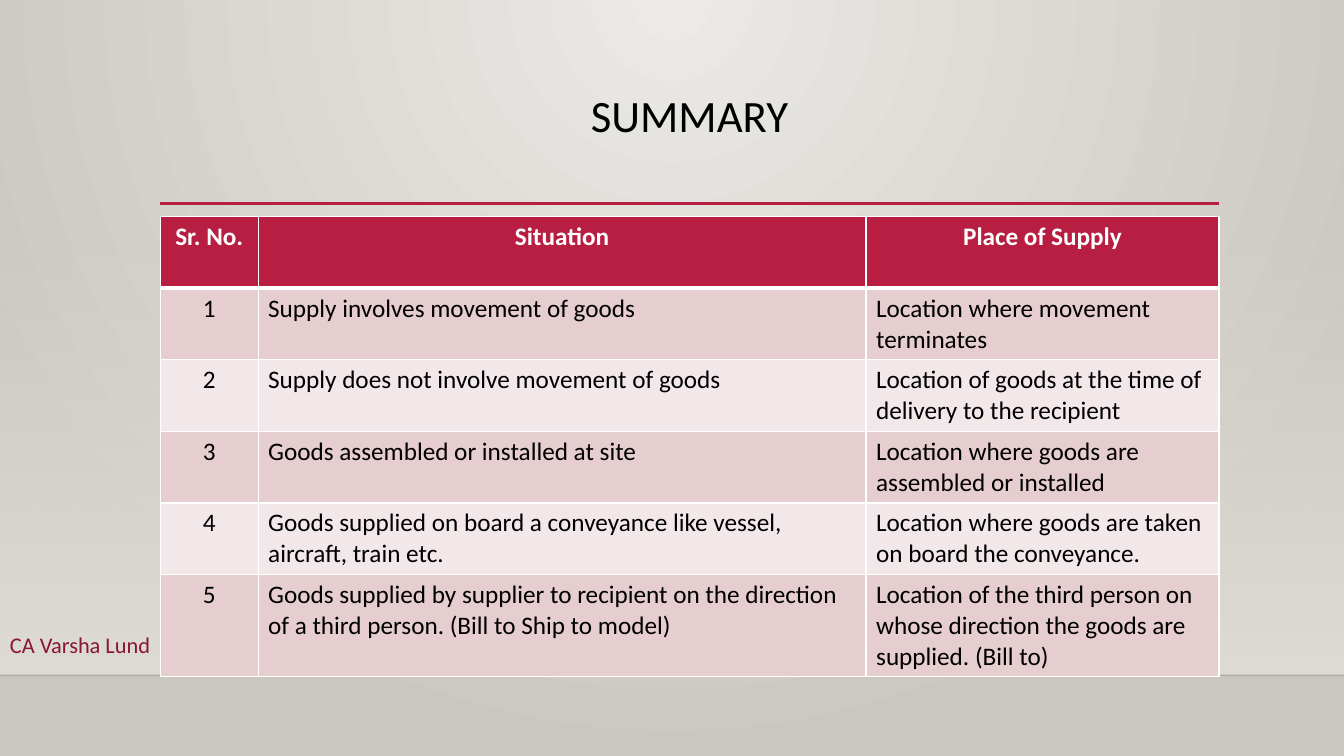
from lxml import etree
from pptx import Presentation
from pptx.dml.color import RGBColor
from pptx.enum.shapes import MSO_CONNECTOR, MSO_SHAPE
from pptx.enum.text import MSO_ANCHOR, PP_ALIGN
from pptx.oxml.ns import qn
from pptx.util import Inches, Pt

STRAIGHT = MSO_CONNECTOR.STRAIGHT
RECTANGLE = MSO_SHAPE.RECTANGLE
TOP = MSO_ANCHOR.TOP
LEFT, CENTER = PP_ALIGN.LEFT, PP_ALIGN.CENTER

BLACK = RGBColor(0x00, 0x00, 0x00)
NEAR_BLACK = RGBColor(0x00, 0x00, 0x01)
WHITE = RGBColor(0xFF, 0xFF, 0xFF)
CRIMSON = RGBColor(0xB7, 0x1E, 0x42)
DARK_RED = RGBColor(0x89, 0x17, 0x31)
BANDS = (RGBColor(0xE6, 0xCD, 0xCF), RGBColor(0xF3, 0xE8, 0xE9))
WALL = (RGBColor(0xEC, 0xEA, 0xE7), RGBColor(0xCA, 0xC7, 0xC1))
STONE = RGBColor(0xDF, 0xDB, 0xD5)

WIDTH, HEIGHT = 13.33, 7.5
MARGIN, CONTENT_WIDTH = 1.59, 10.5
FLOOR = 6.7
COLUMNS = (0.97, 6.03, 3.5)
ROWS = (0.71,) * 5 + (1.01,)
THIN, THICK = 1, 3

HEADINGS = ("Sr. No.", "Situation", "Place of Supply")
SITUATIONS = (
    ("Supply involves movement of goods", "Location where movement terminates"),
    ("Supply does not involve movement of goods",
     "Location of goods at the time of delivery to the recipient"),
    ("Goods assembled or installed at site",
     "Location where goods are assembled or installed"),
    ("Goods supplied on board a conveyance like vessel, aircraft, train etc.",
     "Location where goods are taken on board the conveyance."),
    ("Goods supplied by supplier to recipient on the direction of a third person. "
     "(Bill to Ship to model)",
     "Location of the third person on whose direction the goods are supplied. (Bill to)"),
)


def write_text(frame, text, size, color, alignment=LEFT, bold=False):
    frame.word_wrap = True
    paragraph = frame.paragraphs[0]
    paragraph.alignment = alignment
    run = paragraph.add_run()
    run.text = text
    for name, value in {"name": "Calibri", "size": Pt(size), "bold": bold}.items():
        setattr(run.font, name, value)
    run.font.color.rgb = color
    return paragraph


def add_text(slide, box, text, size, color, alignment=LEFT):
    frame = slide.shapes.add_textbox(*map(Inches, box)).text_frame
    frame.vertical_anchor = TOP
    return write_text(frame, text, size, color, alignment)


def set_gradient(fill, colors):
    fill.gradient()
    for position, (stop, color) in enumerate(zip(fill.gradient_stops, colors)):
        stop.position = position
        stop.color.rgb = color


def set_alpha(color_element, percent):
    etree.SubElement(color_element, qn("a:alpha")).set("val", str(percent * 1000))


def add_rule(slide, left, top, width, color, weight):
    rule = slide.shapes.add_connector(
        STRAIGHT, *map(Inches, (left, top, left + width, top)))
    rule.line.color.rgb = color
    rule.line.width = Pt(weight)
    etree.SubElement(rule._element.spPr, qn("a:effectLst"))
    return rule


def add_backdrop(slide):
    set_gradient(slide.background.fill, WALL)
    linear = slide._element.xpath(".//p:bg//a:lin")[0]
    circle = etree.Element(qn("a:path"), path="circle")
    etree.SubElement(circle, qn("a:fillToRect"),
                     l="43000", t="0", r="43000", b="100000")
    linear.getparent().replace(linear, circle)

    haze_height = 4.49
    haze = slide.shapes.add_shape(
        RECTANGLE, *map(Inches, (0, FLOOR - haze_height, WIDTH, haze_height)))
    haze.shadow.inherit = False
    haze.line.fill.background()
    set_gradient(haze.fill, (STONE, STONE))
    haze.fill.gradient_angle = 270
    set_alpha(haze._element.xpath(".//a:srgbClr")[0], 0)

    floor_line = add_rule(slide, 0, FLOOR, WIDTH, NEAR_BLACK, 1)
    set_alpha(floor_line._element.xpath(".//a:srgbClr")[0], 20)


def add_heading(slide, left, top, width, height):
    add_rule(slide, left, top + height, width, CRIMSON, 2.5)
    title = add_text(slide, (left, top, width, height), "SUMMARY", 32, BLACK, CENTER)
    title.line_spacing = 0.9


def set_borders(cell, top, bottom):
    properties = cell._tc.get_or_add_tcPr()
    weights = {"lnL": THIN, "lnR": THIN, "lnT": top, "lnB": bottom}
    for side, weight in weights.items():
        border = etree.SubElement(properties, qn(f"a:{side}"), w=str(Pt(weight)))
        solid = etree.SubElement(border, qn("a:solidFill"))
        etree.SubElement(solid, qn("a:srgbClr"), val=str(WHITE))


def add_summary_table(slide, left, top):
    records = [HEADINGS]
    records += [(str(number), *texts) for number, texts in enumerate(SITUATIONS, 1)]
    table = slide.shapes.add_table(
        len(ROWS), len(COLUMNS),
        *map(Inches, (left, top, sum(COLUMNS), sum(ROWS)))).table
    for column, width in zip(table.columns, COLUMNS):
        column.width = Inches(width)
    for row_index, (row, height, record) in enumerate(zip(table.rows, ROWS, records)):
        row.height = Inches(height)
        header = row_index == 0
        for column_index, (cell, text) in enumerate(zip(row.cells, record)):
            set_borders(cell, THICK if row_index == 1 else THIN,
                        THICK if header else THIN)
            cell.fill.solid()
            cell.fill.fore_color.rgb = CRIMSON if header else BANDS[(row_index - 1) % 2]
            write_text(cell.text_frame, text, 18, WHITE if header else BLACK,
                       CENTER if header or column_index == 0 else LEFT, header)


def main():
    presentation = Presentation()
    presentation.slide_width = Inches(WIDTH)
    presentation.slide_height = Inches(HEIGHT)
    slide = presentation.slides.add_slide(presentation.slide_layouts[6])
    add_backdrop(slide)
    add_heading(slide, MARGIN, 0.88, CONTENT_WIDTH, 1.14)
    add_summary_table(slide, MARGIN, 2.15)
    add_text(slide, (0, 6.21, 3.58, 0.37), "CA Varsha Lund", 16, DARK_RED)
    presentation.save("out.pptx")


if __name__ == "__main__":
    main()
